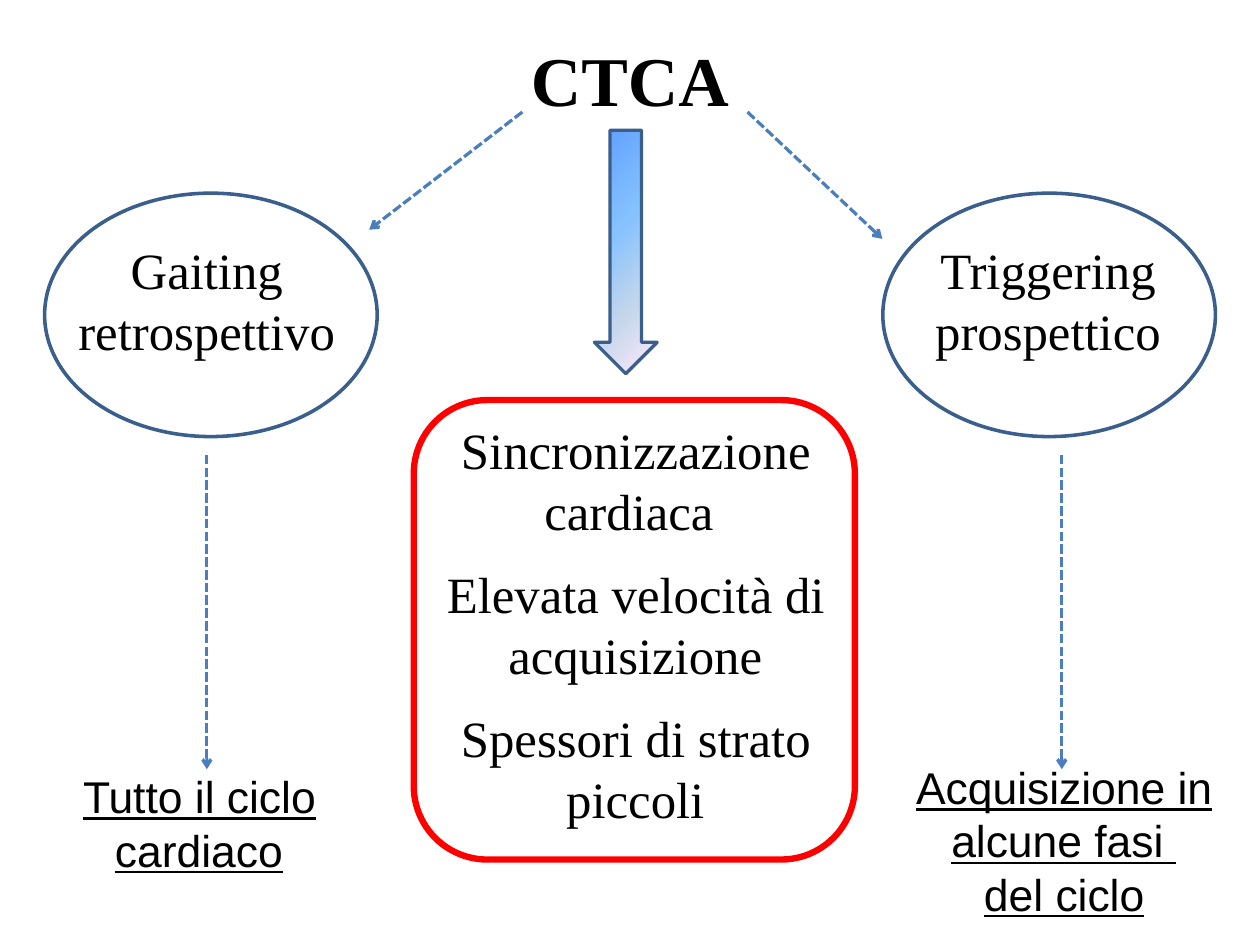
import pptx
import pptx.util
import pptx.dml.color
import pptx.enum.dml
import pptx.enum.shapes
import pptx.enum.text
import pptx.oxml
import pptx.oxml.ns
from lxml import etree

Inches, Pt, Cm = pptx.util.Inches, pptx.util.Pt, pptx.util.Cm
RGBColor = pptx.dml.color.RGBColor
SHAPE = pptx.enum.shapes.MSO_SHAPE
qn = pptx.oxml.ns.qn

BLACK = RGBColor(0x00, 0x00, 0x00)
NAVY = RGBColor(0x3A, 0x5F, 0x8C)
BLUE = RGBColor(0x4B, 0x7E, 0xBC)
RED = RGBColor(0xFF, 0x00, 0x00)
ARROW_STOPS = [(0, RGBColor(0x5E, 0x9E, 0xFF)), (40, RGBColor(0x85, 0xC2, 0xFF)),
               (70, RGBColor(0xC4, 0xD6, 0xEB)), (100, RGBColor(0xFF, 0xEB, 0xFA))]

# Content: the slide is 28 by 21 cm, places on it are in inches
SLIDE_WIDTH, SLIDE_HEIGHT = Cm(28), Cm(21)
WIDTH = SLIDE_WIDTH.inches
SERIF = dict(font="Times New Roman", size=32)
SANS = dict(font="Arial", size=28, underline=True)

title = ["CTCA"]
labels = [  # paragraphs, (left, top, width, height), (left, first) indent, space after, style
    (["Gaiting retrospettivo"], (0, 2.09, 3.43, 1.06), (0.19, 0), 14.1, SERIF),
    (["Triggering prospettico"], (7.32, 2.09, 3.7, 1.14), (0, 0), 14.1, SERIF),
    (["Acquisizione in alcune fasi ", "del ciclo"],
     (7.64, 6.65, 3.23, 1.62), (0.1, 0.01), 0, SANS),
    (["Sincronizzazione cardiaca ", "Elevata velocità di acquisizione",
      "Spessori di strato piccoli"], (3.78, 3.66, 3.46, 3.39), (0.1, 0.01), 14.1, SERIF),
    (["Tutto il ciclo cardiaco"], (0.31, 6.73, 2.76, 1.14), (0.1, 0.01), 14.1, SANS),
]
OVAL_MARGIN, OVAL_TOP, OVAL_WIDTH, OVAL_HEIGHT = 0.39, 1.69, 2.91, 2.13
requirements_frame = (3.62, 3.5, 3.86, 4.02)
down_arrow = (5.2, 1.14, 0.55, 2.13)
branches = [((4.57, 0.98), (3.23, 2.01)), ((6.54, 0.98), (7.72, 2.09))]
branches += [((x, 3.98), (x, 6.73)) for x in (1.81, 9.29)]

deck = pptx.Presentation()
deck.slide_width, deck.slide_height = SLIDE_WIDTH, SLIDE_HEIGHT
slide = deck.slides.add_slide(deck.slide_layouts[6])


def add_text(paragraphs, place, indents, after, font, size, underline=False,
             bold=False, anchor=pptx.enum.text.MSO_ANCHOR.TOP):
    frame = slide.shapes.add_textbox(*map(Inches, place)).text_frame
    frame.word_wrap = True
    frame.vertical_anchor = anchor
    frame.margin_left = frame.margin_right = frame.margin_top = frame.margin_bottom = 0
    frame.text = "\n".join(paragraphs)
    for paragraph in frame.paragraphs:
        paragraph.alignment = pptx.enum.text.PP_ALIGN.CENTER
        paragraph.space_after = Pt(after)
        properties = paragraph._p.get_or_add_pPr()
        for name, indent in zip(("marL", "indent"), indents):
            properties.set(name, str(Inches(indent)))
        for run in paragraph.runs:
            run.font.name, run.font.size = font, Pt(size)
            run.font.bold, run.font.underline = bold, underline
            run.font.color.rgb = BLACK


def add_outline(kind, place, color, weight):
    outline = slide.shapes.add_shape(kind, *map(Inches, place))
    outline.shadow.inherit = False
    outline.fill.background()
    outline.line.color.rgb, outline.line.width = color, Pt(weight)
    return outline


def add_branch(start, end):
    branch = slide.shapes.add_connector(pptx.enum.shapes.MSO_CONNECTOR.STRAIGHT,
                                        *map(Inches, start + end))
    branch.line.color.rgb, branch.line.width = BLUE, Pt(2)
    branch.line.dash_style = pptx.enum.dml.MSO_LINE.SQUARE_DOT
    etree.SubElement(branch.line._get_or_add_ln(), qn("a:tailEnd"), type="arrow")
    etree.SubElement(branch._element.spPr, qn("a:effectLst"))


def set_gradient(shape, stops, angle):
    shape.fill.gradient()
    gradient = shape._element.spPr.find(qn("a:gradFill"))
    stop_list = gradient.find(qn("a:gsLst"))
    for old in list(stop_list):
        stop_list.remove(old)
    for position, color in stops:
        stop = etree.SubElement(stop_list, qn("a:gs"), pos=str(position * 1000))
        etree.SubElement(stop, qn("a:srgbClr"), val=str(color))
    gradient.find(qn("a:lin")).set("ang", str(angle * 60000))


# Title and labels
add_text(title, (0, 0, WIDTH, 1.38), (0, 0), 0, "Times New Roman", 44, bold=True,
         anchor=pptx.enum.text.MSO_ANCHOR.MIDDLE)
for paragraphs, place, indents, after, style in labels:
    add_text(paragraphs, place, indents, after, **style)

# Mirrored ovals around the two techniques
for left in (OVAL_MARGIN, WIDTH - OVAL_MARGIN - OVAL_WIDTH):
    add_outline(SHAPE.OVAL, (left, OVAL_TOP, OVAL_WIDTH, OVAL_HEIGHT), NAVY, 2.25)

# Dashed branches
for start, end in branches:
    add_branch(start, end)

# Requirements frame and the arrow leading to it
add_outline(SHAPE.ROUNDED_RECTANGLE, requirements_frame, RED, 4)
set_gradient(add_outline(SHAPE.DOWN_ARROW, down_arrow, NAVY, 2), ARROW_STOPS, 45)

deck.save("out.pptx")
